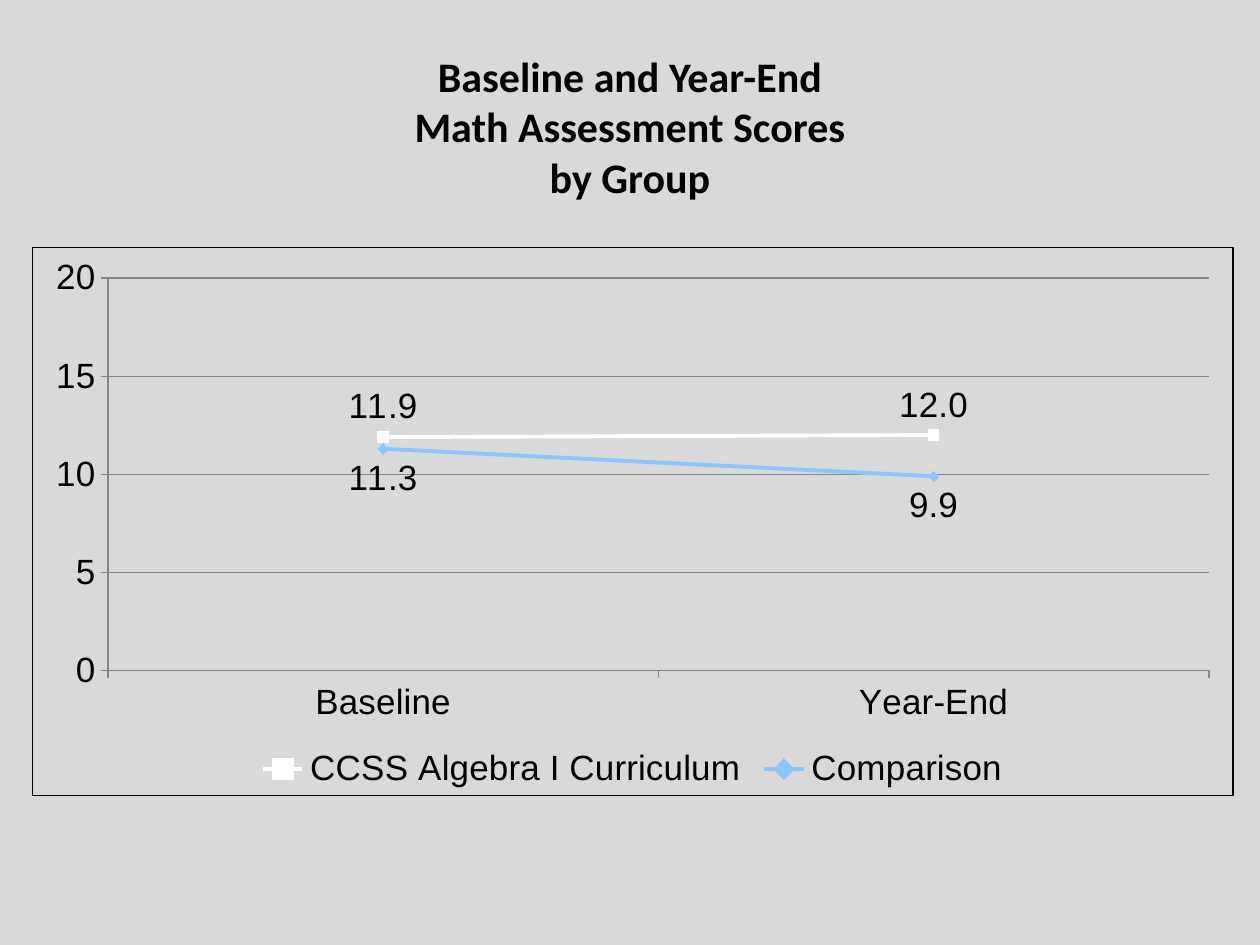
from lxml import etree
from pptx import Presentation
from pptx.chart.data import CategoryChartData
from pptx.dml.color import RGBColor
from pptx.enum.chart import (XL_CHART_TYPE, XL_LABEL_POSITION, XL_LEGEND_POSITION,
                             XL_MARKER_STYLE, XL_TICK_MARK)
from pptx.enum.text import MSO_ANCHOR, MSO_AUTO_SIZE, PP_ALIGN
from pptx.oxml import parse_xml
from pptx.util import Inches, Pt

LINE_MARKERS = XL_CHART_TYPE.LINE_MARKERS
ABOVE, BELOW = XL_LABEL_POSITION.ABOVE, XL_LABEL_POSITION.BELOW
SQUARE, DIAMOND = XL_MARKER_STYLE.SQUARE, XL_MARKER_STYLE.DIAMOND
LEGEND_BOTTOM = XL_LEGEND_POSITION.BOTTOM
TICK_OUTSIDE = XL_TICK_MARK.OUTSIDE
TOP, CENTER, NO_AUTOFIT = MSO_ANCHOR.TOP, PP_ALIGN.CENTER, MSO_AUTO_SIZE.NONE

BACKGROUND, BLACK, AXIS_GRAY = "D9D9D9", "000000", "868686"
TITLE_LINES = ["Baseline and Year-End", "Math Assessment Scores", "by Group"]
CATEGORIES = ["Baseline", "Year-End"]
# name, values, color, marker, label position
GROUPS = [
    ("CCSS Algebra I Curriculum", (11.9, 12.0), "FFFFFF", SQUARE, ABOVE),
    ("Comparison", (11.3, 9.9), "8DC6FF", DIAMOND, BELOW),
]


def color(hex_string):
    return RGBColor.from_string(hex_string)


def set_line(line, hex_string, width):
    line.color.rgb = color(hex_string)
    line.width = Pt(width)


def set_font(font, name, size, bold=False):
    font.name, font.size, font.bold = name, Pt(size), bold
    font.color.rgb = color(BLACK)


def place_title(title, left, top, width, height):
    title.left, title.top = Inches(left), Inches(top)
    title.width, title.height = Inches(width), Inches(height)
    frame = title.text_frame
    frame.auto_size = NO_AUTOFIT
    frame.vertical_anchor = TOP
    frame.margin_top = Inches(0.4)
    frame.margin_bottom = 0
    paragraph = frame.paragraphs[0]
    paragraph.text = "\v".join(TITLE_LINES)
    paragraph.alignment = CENTER
    set_font(paragraph.font, "Calibri", 24, bold=True)


def add_chart_border(chart, hex_string, width):
    """Outline the whole chart, leaving its inside clear."""
    chart_space = chart.element
    namespace = etree.QName(chart_space).namespace
    border = parse_xml(
        f'<c:spPr xmlns:c="{namespace}" '
        'xmlns:a="http://schemas.openxmlformats.org/drawingml/2006/main">'
        f'<a:noFill/><a:ln w="{Pt(width)}"><a:solidFill><a:srgbClr val="{hex_string}"/>'
        '</a:solidFill></a:ln></c:spPr>')
    chart_space.find(f"{{{namespace}}}chart").addnext(border)


def format_series(series, hex_string, marker_style, label_position):
    series.smooth = False
    set_line(series.format.line, hex_string, 2.25)
    marker = series.marker
    marker.style, marker.size = marker_style, 6
    marker.format.fill.solid()
    marker.format.fill.fore_color.rgb = color(hex_string)
    set_line(marker.format.line, hex_string, 0.75)
    labels = series.data_labels
    labels.show_value = True
    labels.position = label_position
    labels.number_format = "#,##0.0"
    labels.number_format_is_linked = False
    set_font(labels.font, "Arial", 20)


def add_score_chart(slide, left, top, width, height):
    data = CategoryChartData()
    data.categories = CATEGORIES
    for name, values, *_ in GROUPS:
        data.add_series(name, values)
    chart = slide.shapes.add_chart(LINE_MARKERS, Inches(left), Inches(top),
                                   Inches(width), Inches(height), data).chart
    set_font(chart.font, "Arial", 20)
    chart.has_title = False
    chart.has_legend = True
    chart.legend.position = LEGEND_BOTTOM
    chart.legend.include_in_layout = False
    add_chart_border(chart, BLACK, 0.75)

    plot = chart.plots[0]
    plot.vary_by_categories = False
    for series, (_, _, *style) in zip(plot.series, GROUPS):
        format_series(series, *style)

    for axis in (chart.category_axis, chart.value_axis):
        axis.major_tick_mark = TICK_OUTSIDE
        set_line(axis.format.line, AXIS_GRAY, 0.75)
    scores = chart.value_axis
    scores.minimum_scale, scores.maximum_scale, scores.major_unit = 0, 20, 5
    scores.tick_labels.number_format = "General"
    scores.tick_labels.number_format_is_linked = False
    scores.has_major_gridlines = True
    set_line(scores.major_gridlines.format.line, AXIS_GRAY, 0.75)


def main():
    presentation = Presentation()
    presentation.slide_width, presentation.slide_height = Inches(10), Inches(7.5)
    slide = presentation.slides.add_slide(presentation.slide_layouts[5])
    slide.background.fill.solid()
    slide.background.fill.fore_color.rgb = color(BACKGROUND)
    place_title(slide.shapes.title, 0.5, 0, 9, 1.55)
    add_score_chart(slide, 0.25, 1.96, 9.54, 4.36)
    presentation.save("out.pptx")


if __name__ == "__main__":
    main()
